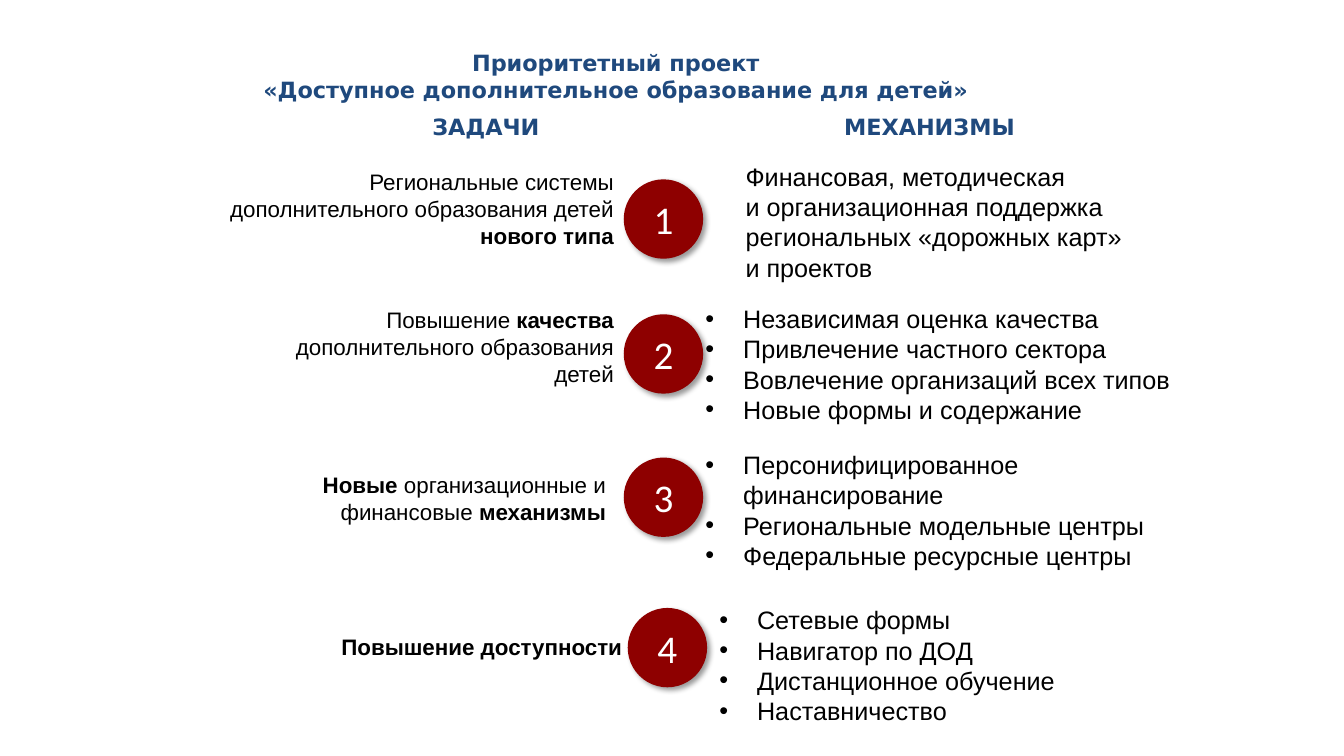
from lxml import etree
from pptx import Presentation, util as u
from pptx.dml.color import RGBColor
from pptx.enum import shapes, text
from pptx.oxml.ns import qn

BLACK, WHITE, NAVY, DARK_RED = "000000", "FFFFFF", "1F497D", "8E0000"
CIRCLE_SIZE = 2
LEFT, CENTER, RIGHT = text.PP_ALIGN.LEFT, text.PP_ALIGN.CENTER, text.PP_ALIGN.RIGHT

# task box, task, circle corner, mechanism box, mechanisms, bulleted; ** marks bold
ROWS = [
    ((5.13, 4.11, 10.59, 2.31),
     ["Региональные системы дополнительного образования детей **нового типа**"],
     (15.72, 4.52), (18.54, 3.94, 11.84, 3.33),
     ["Финансовая, методическая \nи организационная поддержка "
      "региональных «дорожных карт» \nи проектов"], False),
    ((5.74, 7.59, 9.98, 2.31),
     ["Повышение **качества** дополнительного образования детей"],
     (15.72, 7.92), (17.53, 7.52, 12.65, 4.11),
     ["Независимая оценка качества", "Привлечение частного сектора",
      "Вовлечение организаций всех типов", "Новые формы и содержание"], True),
    ((5.74, 11.76, 9.78, 1.63),
     ["**Новые** организационные и финансовые **механизмы**"],
     (15.72, 11.53), (17.53, 11.2, 13, 3.33),
     ["Персонифицированное финансирование", "Региональные модельные центры",
      "Федеральные ресурсные центры"], True),
    ((5.74, 15.82, 10.19, 0.94),
     ["**Повышение доступности**"],
     (15.82, 15.32), (17.88, 15.11, 11.84, 3.33),
     ["Сетевые формы", "Навигатор по ДОД", "Дистанционное обучение",
      "Наставничество"], True),
]
HEADINGS = [
    ((4.52, 1.12, 22, 1.63),
     ["**Приоритетный проект**", "**«Доступное дополнительное образование для детей»**"]),
    ((6.35, 2.72, 11.79, 0.94), ["**ЗАДАЧИ**"]),
    ((17.53, 2.72, 11.79, 0.94), ["**МЕХАНИЗМЫ**"]),
]


def color(value):
    return RGBColor.from_string(value)


def add_bullet(paragraph):
    properties = paragraph._p.get_or_add_pPr()
    indent = u.Cm(0.95)
    properties.set("marL", str(indent))
    properties.set("indent", str(-indent))
    etree.SubElement(properties, qn("a:buFont"), typeface="Arial")
    etree.SubElement(properties, qn("a:buChar"), char="•")


def write(frame, lines, size=18, font="Arial", ink=BLACK, align=LEFT, bulleted=False):
    """Fill a text frame, one paragraph a line; **...** is bold."""
    for number, line in enumerate(lines):
        paragraph = frame.add_paragraph() if number else frame.paragraphs[0]
        paragraph.alignment = align
        if bulleted:
            add_bullet(paragraph)
        for part_number, part in enumerate(line.split("**")):
            for piece_number, piece in enumerate(part.split("\n")):
                if piece_number:
                    paragraph.add_line_break()
                if piece:
                    run = paragraph.add_run()
                    run.text = piece
                    run.font.size = u.Pt(size)
                    run.font.name = font
                    run.font.bold = part_number % 2 == 1
                    run.font.color.rgb = color(ink)


class TaskSlide:
    """Current slide and its style."""

    def __init__(self, presentation):
        self.slide = presentation.slides.add_slide(presentation.slide_layouts[6])

    def text_box(self, box, lines, **style):
        shape = self.slide.shapes.add_textbox(*map(u.Cm, box))
        frame = shape.text_frame
        frame.word_wrap = True
        frame.auto_size = text.MSO_AUTO_SIZE.SHAPE_TO_FIT_TEXT
        write(frame, lines, **style)

    def heading(self, box, lines):
        self.text_box(box, lines, size=16, font="DejaVu Sans", ink=NAVY, align=CENTER)

    def number_circle(self, corner, number):
        shape = self.slide.shapes.add_shape(
            shapes.MSO_SHAPE.OVAL, *map(u.Cm, (*corner, CIRCLE_SIZE, CIRCLE_SIZE)))
        shape.fill.solid()
        shape.fill.fore_color.rgb = color(DARK_RED)
        shape.line.fill.background()
        self.cast_shadow(shape)
        shape.text_frame.vertical_anchor = text.MSO_ANCHOR.MIDDLE
        write(shape.text_frame, [str(number)], size=28, font="Calibri", ink=WHITE,
              align=CENTER)

    def cast_shadow(self, shape):
        shape.shadow.inherit = False
        effects = shape._element.spPr.find(qn("a:effectLst"))
        shadow = etree.SubElement(
            effects, qn("a:outerShdw"), blurRad=str(u.Pt(4)), dist=str(u.Pt(3)),
            dir=str(45 * 60000), algn="tl", rotWithShape="0")
        tint = etree.SubElement(shadow, qn("a:srgbClr"), val=BLACK)
        etree.SubElement(tint, qn("a:alpha"), val="40000")


def main():
    presentation = Presentation()
    presentation.slide_width = u.Cm(33.87)
    presentation.slide_height = u.Cm(19.05)
    page = TaskSlide(presentation)
    for number, row in enumerate(ROWS, 1):
        task_box, task, corner, mechanism_box, mechanisms, bulleted = row
        page.text_box(task_box, task, size=16, align=RIGHT)
        page.number_circle(corner, number)
        page.text_box(mechanism_box, mechanisms, bulleted=bulleted)
    for box, lines in HEADINGS:
        page.heading(box, lines)
    presentation.save("out.pptx")


if __name__ == "__main__":
    main()
